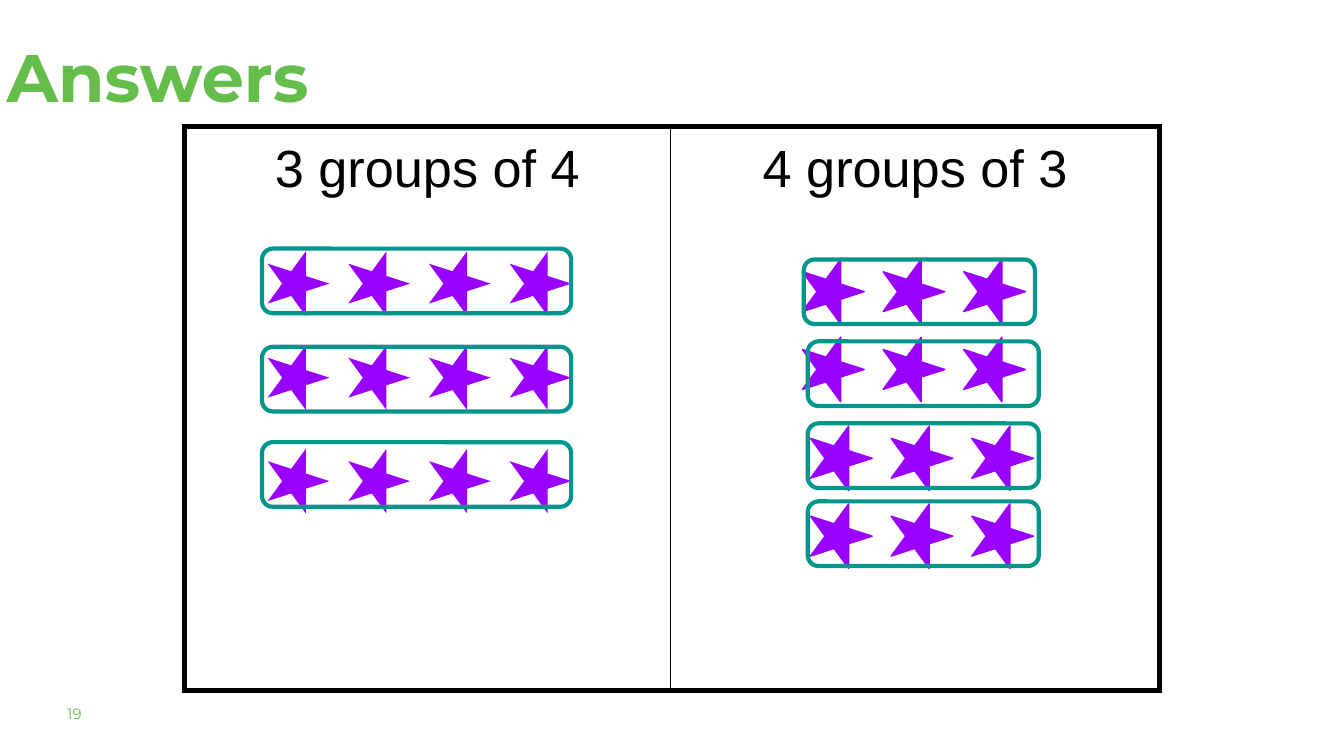
from dataclasses import dataclass

from lxml import etree
from pptx import Presentation
from pptx.dml.color import RGBColor
from pptx.enum.shapes import MSO_SHAPE
from pptx.enum.text import MSO_ANCHOR, PP_ALIGN
from pptx.oxml.ns import qn
from pptx.util import Pt

STAR = MSO_SHAPE.STAR_5_POINT
ROUNDED = MSO_SHAPE.ROUNDED_RECTANGLE
TOP = MSO_ANCHOR.TOP
LEFT, CENTER = PP_ALIGN.LEFT, PP_ALIGN.CENTER
TITLE_ONLY = 5


@dataclass(frozen=True)
class Theme:
    green: str = "65BE4B"
    purple: str = "9900FF"
    teal: str = "00968C"
    black: str = "000000"
    heading_font: str = "Montserrat"
    body_font: str = "Arial"
    title_size: float = 36
    cell_size: float = 28
    number_size: float = 8
    thick_border: float = 3
    thin_border: float = 0.75
    line_spacing: float = 1.15


class SlideBuilder:
    star_width, star_height, star_pitch = 34.6, 33.1, 43.2
    ring_height = 34.6

    def __init__(self, slide, theme):
        self.slide = slide
        self.theme = theme

    def set_text(self, frame, text, font, size, color, bold=False, align=LEFT, spacing=1.0):
        frame.text = text
        paragraph = frame.paragraphs[0]
        paragraph.alignment = align
        paragraph.line_spacing = spacing
        paragraph.font.name = font
        paragraph.font.size = Pt(size)
        paragraph.font.bold = bold
        paragraph.font.color.rgb = RGBColor.from_string(color)

    def clear_margins(self, frame):
        frame.margin_left = frame.margin_right = frame.margin_top = frame.margin_bottom = 0
        frame.vertical_anchor = TOP
        frame.word_wrap = True

    def title(self, text, left, top, width, height):
        theme = self.theme
        shape = self.slide.shapes.title
        shape.left, shape.top, shape.width, shape.height = map(Pt, (left, top, width, height))
        self.clear_margins(shape.text_frame)
        self.set_text(shape.text_frame, text, theme.heading_font, theme.title_size,
                      theme.green, bold=True, spacing=theme.line_spacing)

    def page_number(self, text, left, top, width, height):
        box = self.slide.shapes.add_textbox(*map(Pt, (left, top, width, height)))
        self.clear_margins(box.text_frame)
        self.set_text(box.text_frame, text, self.theme.heading_font,
                      self.theme.number_size, self.theme.green)

    def border(self, cell, sides):
        """Set borders given as widths for left, right, top and bottom."""
        properties = cell._tc.get_or_add_tcPr()
        for index, (side, width) in enumerate(zip("LRTB", sides)):
            line = etree.Element(qn(f"a:ln{side}"), w=str(Pt(width)))
            fill = etree.SubElement(line, qn("a:solidFill"))
            etree.SubElement(fill, qn("a:srgbClr"), val=self.theme.black)
            properties.insert(index, line)

    def table(self, headings, left, top, column_widths, height):
        theme = self.theme
        table = self.slide.shapes.add_table(
            1, len(headings), Pt(left), Pt(top), Pt(sum(column_widths)), Pt(height)).table
        table.first_row = table.horz_banding = False
        last = len(headings) - 1
        for index, (heading, width) in enumerate(zip(headings, column_widths)):
            table.columns[index].width = Pt(width)
            cell = table.cell(0, index)
            cell.fill.background()
            cell.margin_left = cell.margin_right = Pt(2.9)
            cell.margin_top = cell.margin_bottom = Pt(2.9)
            cell.vertical_anchor = TOP
            self.set_text(cell.text_frame, heading, theme.body_font, theme.cell_size,
                          theme.black, align=CENTER, spacing=theme.line_spacing)
            thick, thin = theme.thick_border, theme.thin_border
            self.border(cell, (thick if index == 0 else thin,
                               thick if index == last else thin, thick, thick))

    def star_row(self, count, left, top, outlined):
        group = self.slide.shapes.add_group_shape()
        color = RGBColor.from_string(self.theme.purple)
        for index in range(count):
            star = group.shapes.add_shape(STAR, Pt(left + index * self.star_pitch), Pt(top),
                                          Pt(self.star_width), Pt(self.star_height))
            star.rotation = 90
            star.shadow.inherit = False
            star.fill.solid()
            star.fill.fore_color.rgb = color
            if outlined:
                star.line.color.rgb = color
                star.line.width = Pt(0.75)
            else:
                star.line.fill.background()

    def ring(self, left, top, width):
        shape = self.slide.shapes.add_shape(
            ROUNDED, Pt(left), Pt(top), Pt(width), Pt(self.ring_height))
        shape.shadow.inherit = False
        shape.fill.background()
        shape.line.color.rgb = RGBColor.from_string(self.theme.teal)
        shape.line.width = Pt(2.25)


def main():
    presentation = Presentation()
    presentation.slide_width, presentation.slide_height = Pt(720), Pt(405)
    slide = presentation.slides.add_slide(presentation.slide_layouts[TITLE_ONLY])
    builder = SlideBuilder(slide, Theme())

    # Title, page number and the two answer columns
    builder.page_number("19", 36, 377.3, 56.9, 14.4)
    builder.title("Answers", 3.6, 12.2, 661, 56.2)
    builder.table(("3 groups of 4", "4 groups of 3"), 98.6, 67.7, (260.6, 262.1), 302.4)

    # Each group: star left, star top, ring left, ring top
    groups_of_four = (
        (142.6, 135.4, 140.4, 133.2),
        (142.6, 185.8, 140.4, 185.8),
        (142.6, 241.2, 140.4, 236.9),
    )
    groups_of_three = (
        (429.1, 139.7, 430.6, 139),
        (429.1, 181.4, 432.7, 182.9),
        (433.4, 229, 432.7, 226.8),
        (433.4, 270.7, 432.7, 268.6),
    )
    answers = ((4, groups_of_four, 165.6, False), (3, groups_of_three, 123.8, True))

    # Stars, then the rings around each group
    for count, groups, _, outlined in answers:
        for star_left, star_top, _, _ in groups:
            builder.star_row(count, star_left, star_top, outlined)
    for _, groups, ring_width, _ in answers:
        for _, _, ring_left, ring_top in groups:
            builder.ring(ring_left, ring_top, ring_width)

    presentation.save("out.pptx")


if __name__ == "__main__":
    main()
